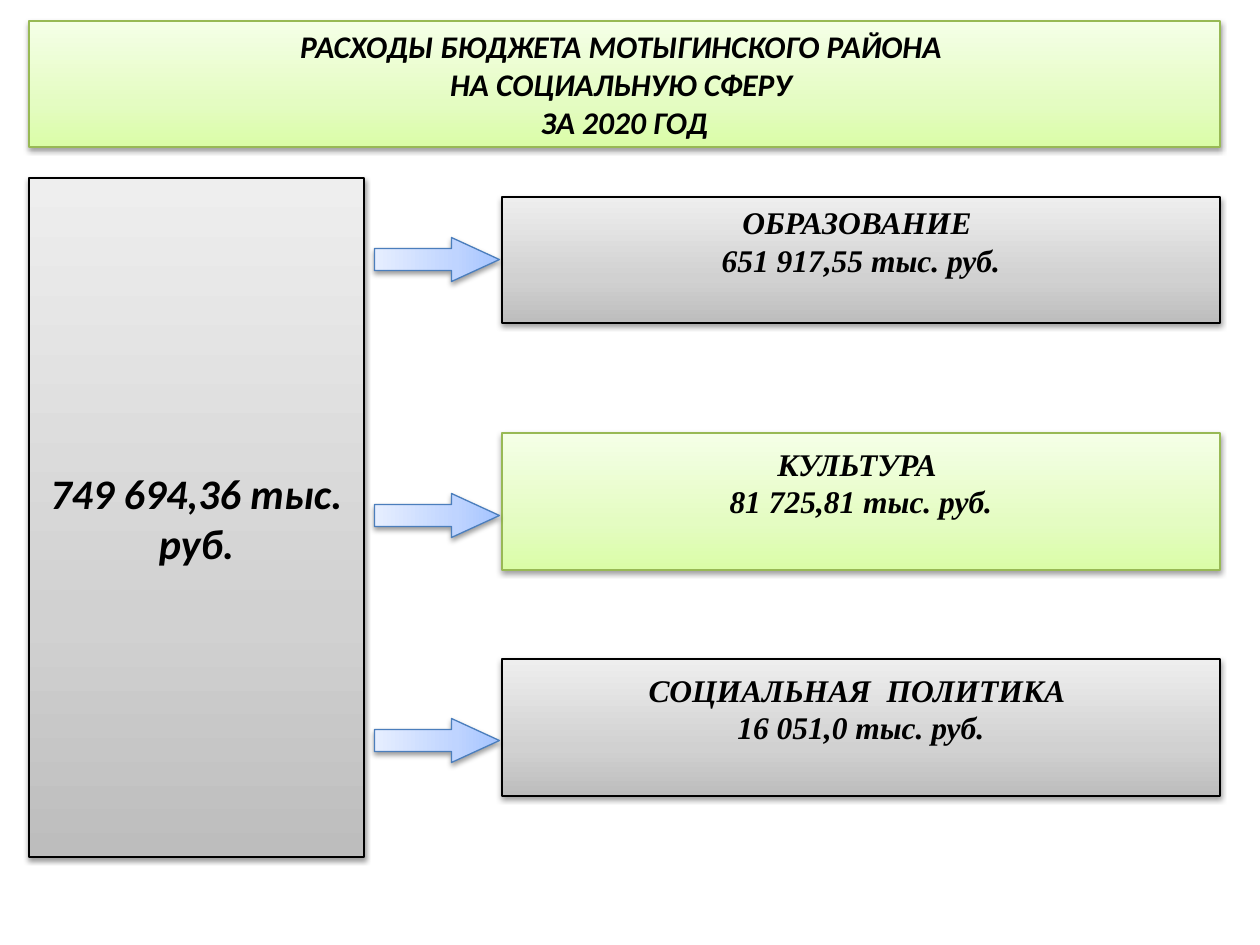
from lxml import etree
from pptx import Presentation
from pptx import util as u
from pptx.dml.color import RGBColor
from pptx.enum import shapes, text
from pptx.oxml.ns import qn

PX = 914400 // 126
BLACK = RGBColor(0x00, 0x00, 0x00)
GREEN_LINE = RGBColor(0x98, 0xB9, 0x55)
BLUE_LINE = RGBColor(0x4B, 0x7E, 0xBC)


def stops(*colours):
    return list(zip((0, 35, 100), (RGBColor.from_string(c) for c in colours)))


GREEN = stops("DAFDA7", "E4FCC2", "F5FFE7"), GREEN_LINE
GREY = stops("BDBDBD", "D1D1D1", "EEEEEE"), BLACK
BLUE = stops("A4C4FF", "BFD4FF", "E6EEFF"), BLUE_LINE

TITLE = "РАСХОДЫ БЮДЖЕТА МОТЫГИНСКОГО РАЙОНА \vНА СОЦИАЛЬНУЮ СФЕРУ \vЗА 2020 ГОД"
TOTAL = "749 694,36 тыс. руб."
SECTORS = [
    ("ОБРАЗОВАНИЕ ", "651 917,55 тыс. руб.", 197, 126, 259, GREY),
    ("КУЛЬТУРА ", "81 725,81 тыс. руб.", 433, 137, 515, GREEN),
    ("СОЦИАЛЬНАЯ  ПОЛИТИКА ", "16 051,0 тыс. руб.", 659, 137, 740, GREY),
]
LEFT, RIGHT = 29, 1220
TOTAL_WIDTH, SECTOR_LEFT = 335, 502
ARROW_CENTRE, ARROW_WIDTH, ARROW_LENGTH = 437, 44, 125
LINE_HEIGHT, INSET = 38, 6


def px(*lengths):
    return [u.Emu(length * PX) for length in lengths]


def add(parent, tag, **attributes):
    return etree.SubElement(parent, qn(tag), attributes)


def decorate(shape, scheme):
    gradient_stops, line_colour = scheme
    shape.line.color.rgb = line_colour
    shape.line.width = u.Pt(0.75)
    shape.shadow.inherit = False
    properties = shape._element.spPr
    gradient = etree.Element(qn("a:gradFill"), rotWithShape="1")
    stop_list = add(gradient, "a:gsLst")
    for position, colour in gradient_stops:
        stop = add(stop_list, "a:gs", pos=str(position * 1000))
        add(stop, "a:srgbClr", val=str(colour))
    add(gradient, "a:lin", ang="16200000", scaled="0")
    properties.find(qn("a:ln")).addprevious(gradient)
    shadow = add(properties.find(qn("a:effectLst")), "a:outerShdw", blurRad="40000",
                 dist="20000", dir="5400000", rotWithShape="0")
    add(add(shadow, "a:srgbClr", val=str(BLACK)), "a:alpha", val="38000")


def write(shape, lines, font_name, size, bottom=INSET):
    frame = shape.text_frame
    frame.text = "\n".join(lines)
    frame.word_wrap = True
    frame.auto_size = text.MSO_AUTO_SIZE.NONE
    frame.vertical_anchor = text.MSO_ANCHOR.MIDDLE
    frame.margin_top, frame.margin_bottom = px(INSET, bottom)
    for paragraph in frame.paragraphs:
        paragraph.alignment = text.PP_ALIGN.CENTER
        font = paragraph.font
        font.name, font.size = font_name, u.Pt(size)
        font.bold = font.italic = True
        font.color.rgb = BLACK


def add_shape(slide, kind, box, scheme):
    shape = slide.shapes.add_shape(kind, *px(*box))
    decorate(shape, scheme)
    return shape


def flatten_corner(shape):
    adjustments = next(shape._element.spPr.iter(qn("a:avLst")))
    for guide in list(adjustments):
        adjustments.remove(guide)
    add(adjustments, "a:gd", name="adj", fmla="val 0")


def add_arrow(slide, centre):
    box = (ARROW_CENTRE - ARROW_WIDTH // 2, centre - ARROW_LENGTH // 2,
           ARROW_WIDTH, ARROW_LENGTH)
    arrow = add_shape(slide, shapes.MSO_SHAPE.DOWN_ARROW, box, BLUE)
    arrow.rotation = 270
    arrow.adjustments[0], arrow.adjustments[1] = 0.5, 1.09


def main():
    presentation = Presentation()
    presentation.slide_width, presentation.slide_height = u.Inches(10), u.Inches(7.5)
    slide = presentation.slides.add_slide(presentation.slide_layouts[5])

    title = slide.shapes.title
    title.left, title.top, title.width, title.height = px(LEFT, 21, RIGHT - LEFT, 126)
    decorate(title, GREEN)
    write(title, [TITLE], "Calibri", 18)

    total = add_shape(slide, shapes.MSO_SHAPE.FOLDED_CORNER,
                      (LEFT, 178, TOTAL_WIDTH, 679), GREY)
    flatten_corner(total)
    write(total, [TOTAL], "Calibri", 24)

    for name, amount, top, height, arrow_centre, scheme in SECTORS:
        box = (SECTOR_LEFT, top, RIGHT - SECTOR_LEFT, height)
        sector = add_shape(slide, shapes.MSO_SHAPE.RECTANGLE, box, scheme)
        write(sector, [name, amount], "Times New Roman", 18, INSET + LINE_HEIGHT)
        add_arrow(slide, arrow_centre)

    presentation.save("out.pptx")


if __name__ == "__main__":
    main()
